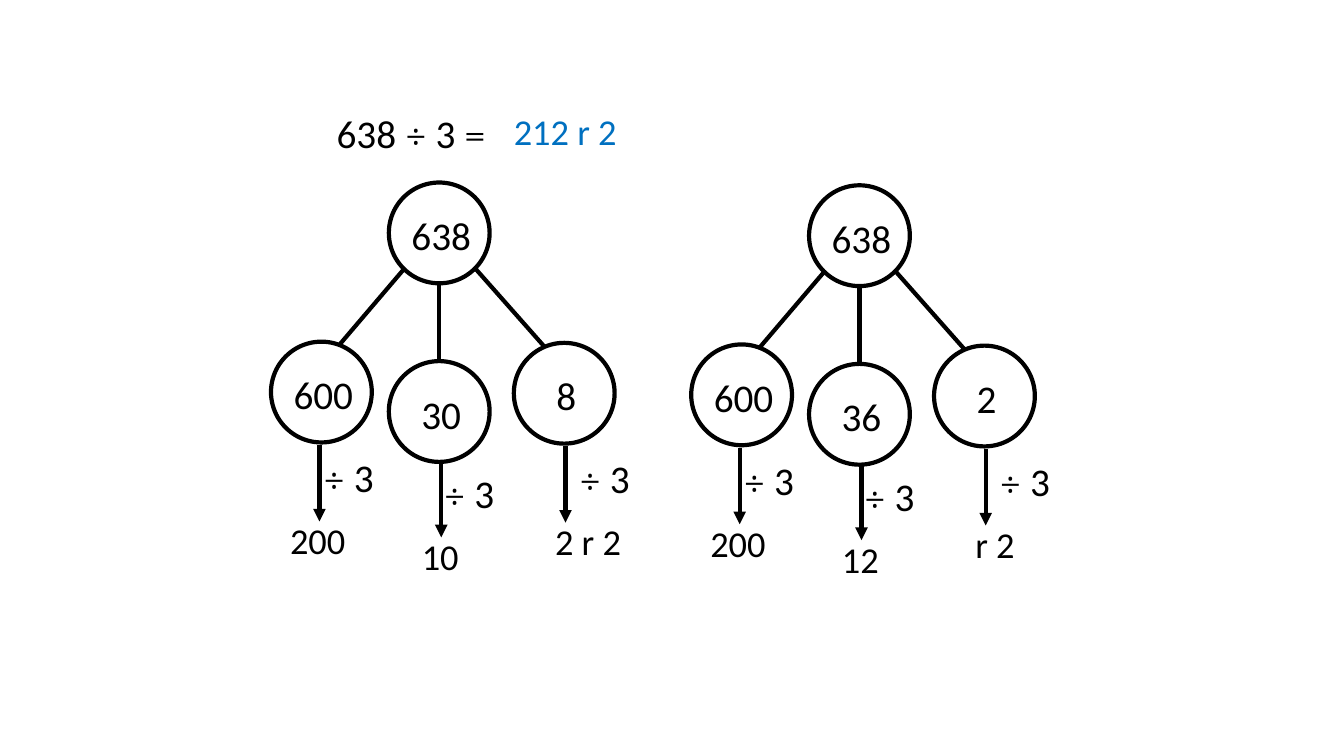
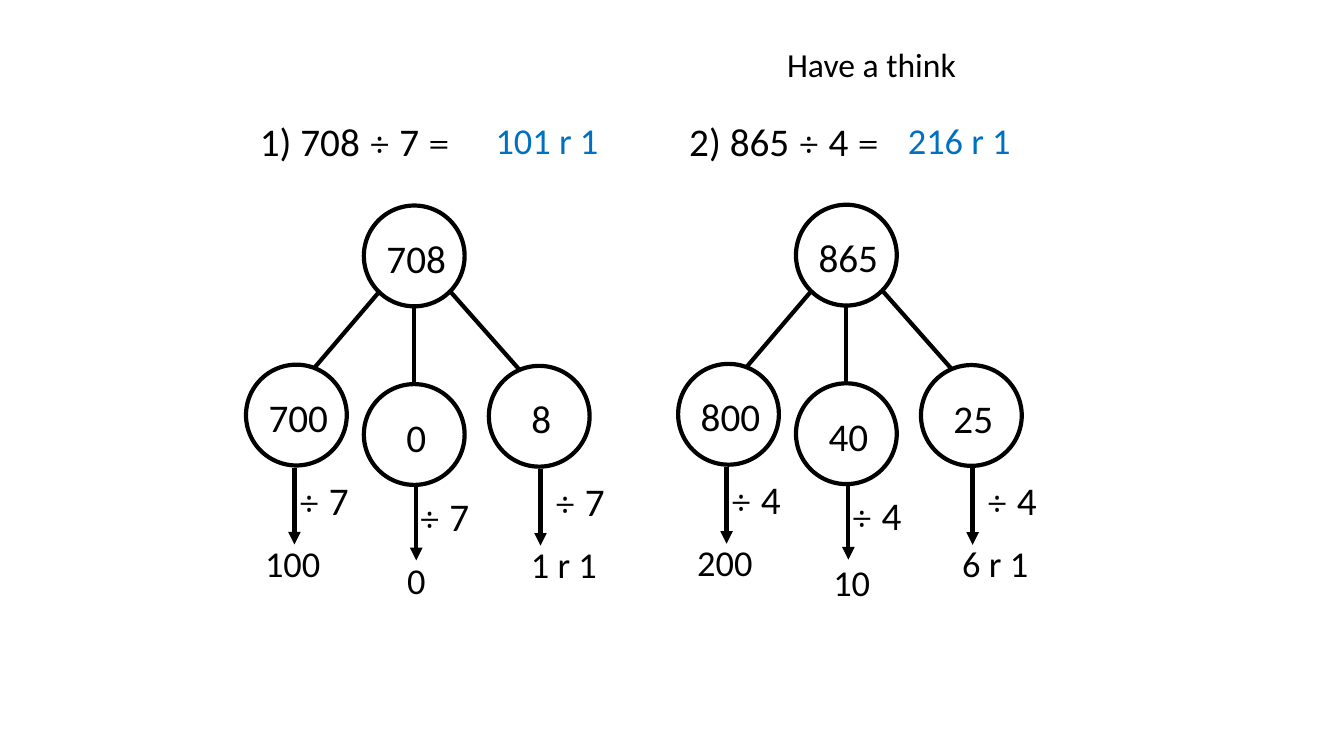
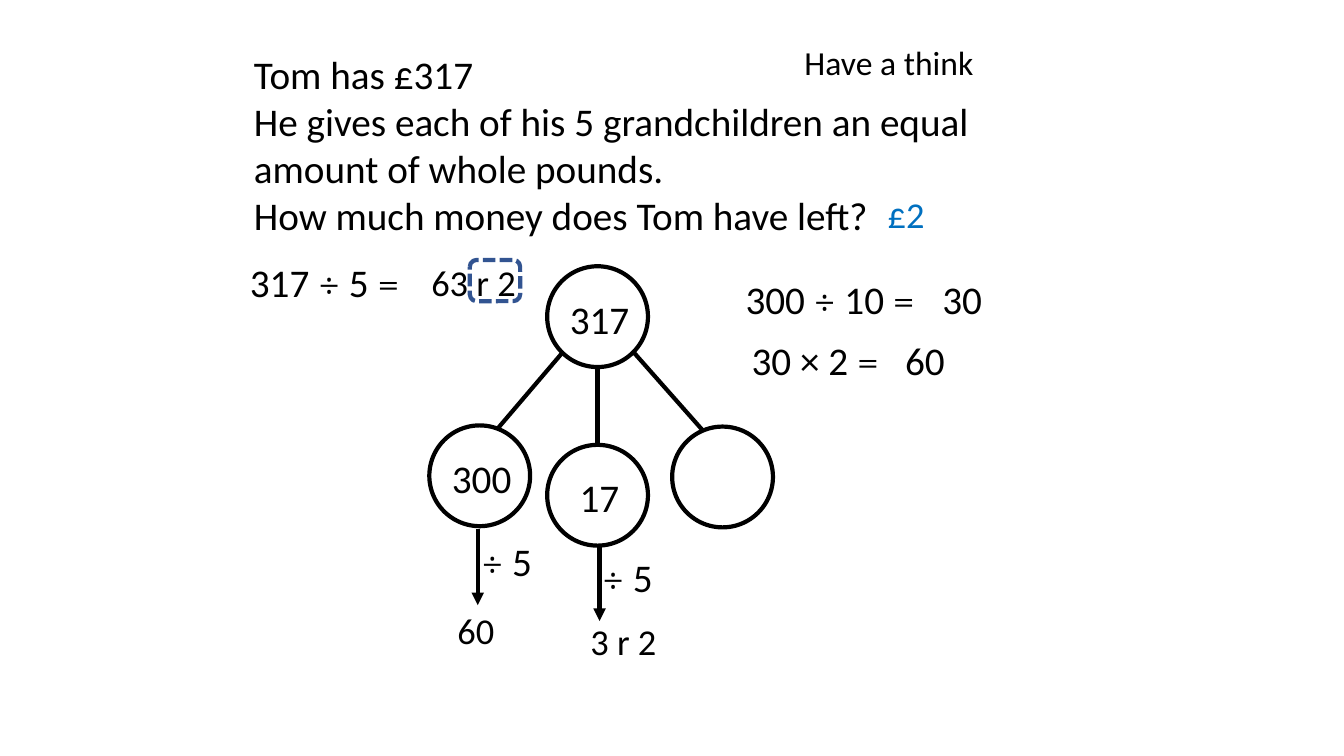
import itertools
from dataclasses import dataclass

import lxml.etree
import pptx
import pptx.dml.color
import pptx.enum.dml
import pptx.enum.shapes
import pptx.enum.text
import pptx.oxml.ns
import pptx.util

Cm = pptx.util.Cm
Pt = pptx.util.Pt
RGBColor = pptx.dml.color.RGBColor
SHAPE = pptx.enum.shapes.MSO_SHAPE
ALIGN = pptx.enum.text.PP_ALIGN
ANCHOR = pptx.enum.text.MSO_ANCHOR
AUTO_SIZE = pptx.enum.text.MSO_AUTO_SIZE

# Shared style
BLACK = RGBColor(0x00, 0x00, 0x00)
WHITE = RGBColor(0xFF, 0xFF, 0xFF)
ANSWER_BLUE = RGBColor(0x00, 0x70, 0xC0)
OUTLINE_BLUE = RGBColor(0x32, 0x54, 0x91)
TEXT_FONT, SIGN_FONT = "Calibri", "Cambria"
SIGNS = "÷="
NUMBER_SIZE, ANSWER_SIZE, HEADING_SIZE = 28, 26, 24
LINE_WIDTH = Pt(3)
TITLE_ONLY = 5

# Part-whole tree, in cm from its top left corner
DIAMETER = 2.54
WHOLE_AT = (2.97, 0)
PART_AT = [(0, 4.01), (2.97, 4.5), (6.12, 4.04)]
STEMS = [((3.35, 2.18), (1.73, 4.08)),
         ((4.24, 2.54), (4.24, 4.47)),
         ((5.16, 2.18), (6.92, 4.17))]
# Arrow start below each part circle, and the divisor's offset from the arrow
ARROW_AT = [(1.22, 2.6), (1.32, 2.51), (1.3, 2.6)]
ARROW_LENGTH = 1.93
DIVISOR_SHIFT = [-0.15, -0.18, 0.1]


@dataclass
class Branch:
    number: str
    result: str = ""
    result_left: float = 0.23
    result_top: float = 4.32


def add_runs(paragraph, text, size, color):
    """Set words and numbers in one font and the signs in another."""
    for is_sign, letters in itertools.groupby(text, lambda c: c in SIGNS):
        run = paragraph.add_run()
        run.text = "".join(letters)
        run.font.name = SIGN_FONT if is_sign else TEXT_FONT
        run.font.size = Pt(size)
        run.font.color.rgb = color


def place_text(box, left, top, width, paragraphs, size, color, lines=1):
    box.left, box.top, box.width = Cm(left), Cm(top), Cm(width)
    box.height = Cm(lines * size * 0.043 + 0.25)
    frame = box.text_frame
    frame.word_wrap = True
    frame.auto_size = AUTO_SIZE.SHAPE_TO_FIT_TEXT
    frame.vertical_anchor = ANCHOR.TOP
    for index, text in enumerate(paragraphs):
        paragraph = frame.add_paragraph() if index else frame.paragraphs[0]
        paragraph.alignment = ALIGN.LEFT
        add_runs(paragraph, text, size, color)


def add_text(slide, left, top, width, *paragraphs, size=NUMBER_SIZE,
             color=BLACK, lines=1):
    box = slide.shapes.add_textbox(0, 0, 0, 0)
    place_text(box, left, top, width, paragraphs, size, color, lines)


def add_answer(slide, left, top, width, text, color=ANSWER_BLUE):
    add_text(slide, left, top, width, text, size=ANSWER_SIZE, color=color)


def add_titled_slide(deck, left, top, width, title, size=HEADING_SIZE):
    slide = deck.slides.add_slide(deck.slide_layouts[TITLE_ONLY])
    place_text(slide.shapes.title, left, top, width, [title], size, BLACK)
    return slide


def add_line(slide, start, end, arrow=False):
    line = slide.shapes.add_connector(
        pptx.enum.shapes.MSO_CONNECTOR.STRAIGHT,
        *(Cm(length) for length in (*start, *end)))
    line.line.color.rgb = BLACK
    line.line.width = LINE_WIDTH
    qn = pptx.oxml.ns.qn
    properties = line._element.spPr
    if arrow:
        lxml.etree.SubElement(properties.find(qn("a:ln")), qn("a:tailEnd"),
                              type="triangle")
    lxml.etree.SubElement(properties, qn("a:effectLst"))


def add_circle(slide, left, top, number):
    circle = slide.shapes.add_shape(SHAPE.OVAL, Cm(left), Cm(top),
                                    Cm(DIAMETER), Cm(DIAMETER))
    circle.shadow.inherit = False
    circle.fill.solid()
    circle.fill.fore_color.rgb = WHITE
    circle.line.color.rgb = BLACK
    circle.line.width = LINE_WIDTH
    frame = circle.text_frame
    frame.margin_left = frame.margin_top = Cm(0.1)
    frame.margin_right = frame.margin_bottom = 0
    frame.vertical_anchor = ANCHOR.MIDDLE
    frame.paragraphs[0].alignment = ALIGN.CENTER
    add_runs(frame.paragraphs[0], number, NUMBER_SIZE, BLACK)


def add_tree(slide, left, top, whole, divisor, branches):
    """A whole split into three parts, each divided below its circle."""
    def at(point):
        return left + point[0], top + point[1]

    add_circle(slide, *at(WHOLE_AT), whole)
    for start, end in STEMS:
        add_line(slide, at(start), at(end))
    for branch, corner, arrow, shift in zip(branches, PART_AT, ARROW_AT,
                                            DIVISOR_SHIFT):
        x, y = at(corner)
        add_circle(slide, x, y, branch.number)
        if not branch.result:
            continue
        arrow_x, arrow_y = x + arrow[0], y + arrow[1]
        add_line(slide, (arrow_x, arrow_y),
                 (arrow_x, arrow_y + ARROW_LENGTH), arrow=True)
        add_text(slide, arrow_x + shift, arrow_y + 0.09, 2, f"÷ {divisor}")
        add_answer(slide, x + branch.result_left, y + branch.result_top,
                   2.74, branch.result, color=BLACK)


def build_two_ways(deck):
    slide = add_titled_slide(deck, 8.23, 2.62, 4.9, "638 ÷ 3 =", NUMBER_SIZE)
    add_answer(slide, 12.7, 2.62, 4.83, "212 r 2")
    add_tree(slide, 6.83, 4.6, "638", 3, [
        Branch("600", "200"), Branch("30", "10", 0.58, 4.24),
        Branch("8", "2 r 2", 0.79)])
    add_tree(slide, 17.42, 4.67, "638", 3, [
        Branch("600", "200"), Branch("36", "12", 0.58, 4.24),
        Branch("2", "r 2", 0.79)])


def build_practice(deck):
    slide = add_titled_slide(deck, 19.58, 0.97, 5.82, "Have a think")
    add_text(slide, 6.3, 2.82, 5.97, "1) 708 ÷ 7 =")
    add_answer(slide, 12.24, 2.84, 4.83, "101 r 1")
    add_tree(slide, 6.2, 5.18, "708", 7, [
        Branch("700", "100"), Branch("0", "0", 0.84, 4.27),
        Branch("8", "1 r 1", 0.81)])
    add_text(slide, 17.12, 2.82, 5.97, "2) 865 ÷ 4 =")
    add_answer(slide, 22.63, 2.84, 4.83, "216 r 1")
    add_tree(slide, 17.09, 5.16, "865", 4, [
        Branch("800", "200"), Branch("40", "10", 0.69, 4.34),
        Branch("25", "6 r 1", 0.79)])


def build_word_problem(deck):
    slide = add_titled_slide(deck, 20.02, 0.94, 5.82, "Have a think")
    add_text(slide, 6.15, 1.14, 20.09,
             "Tom has £317",
             "He gives each of his 5 grandchildren an equal amount of "
             "whole pounds.",
             "How much money does Tom have left?", lines=4)
    add_answer(slide, 22.12, 4.72, 2.74, "£2")

    # Division with its remainder outlined
    add_text(slide, 6.05, 6.38, 5.54, "317 ÷ 5 =")
    add_answer(slide, 10.62, 6.43, 2.74, "63 r 2", color=BLACK)
    remainder = slide.shapes.add_shape(SHAPE.ROUNDED_RECTANGLE, Cm(11.84),
                                       Cm(6.55), Cm(1.27), Cm(1.04))
    remainder.shadow.inherit = False
    remainder.fill.background()
    remainder.line.color.rgb = OUTLINE_BLUE
    remainder.line.width = LINE_WIDTH
    remainder.line.dash_style = pptx.enum.dml.MSO_LINE.SQUARE_DOT

    add_tree(slide, 10.82, 6.71, "317", 5, [
        Branch("300", "60", 0.46, 4.47), Branch("17", "3 r 2", 0.84, 4.27),
        Branch("")])

    # Working for 300 divided by 5
    add_text(slide, 18.54, 6.81, 5.54, "300 ÷ 10 =")
    add_text(slide, 23.5, 6.81, 1.78, "30")
    add_text(slide, 18.69, 8.36, 4.24, "30 × 2 =")
    add_text(slide, 22.56, 8.36, 2.16, "60")


def main():
    deck = pptx.Presentation()
    deck.slide_width, deck.slide_height = Cm(33.87), Cm(19.05)
    build_two_ways(deck)
    build_practice(deck)
    build_word_problem(deck)
    deck.save("out.pptx")


if __name__ == "__main__":
    main()
